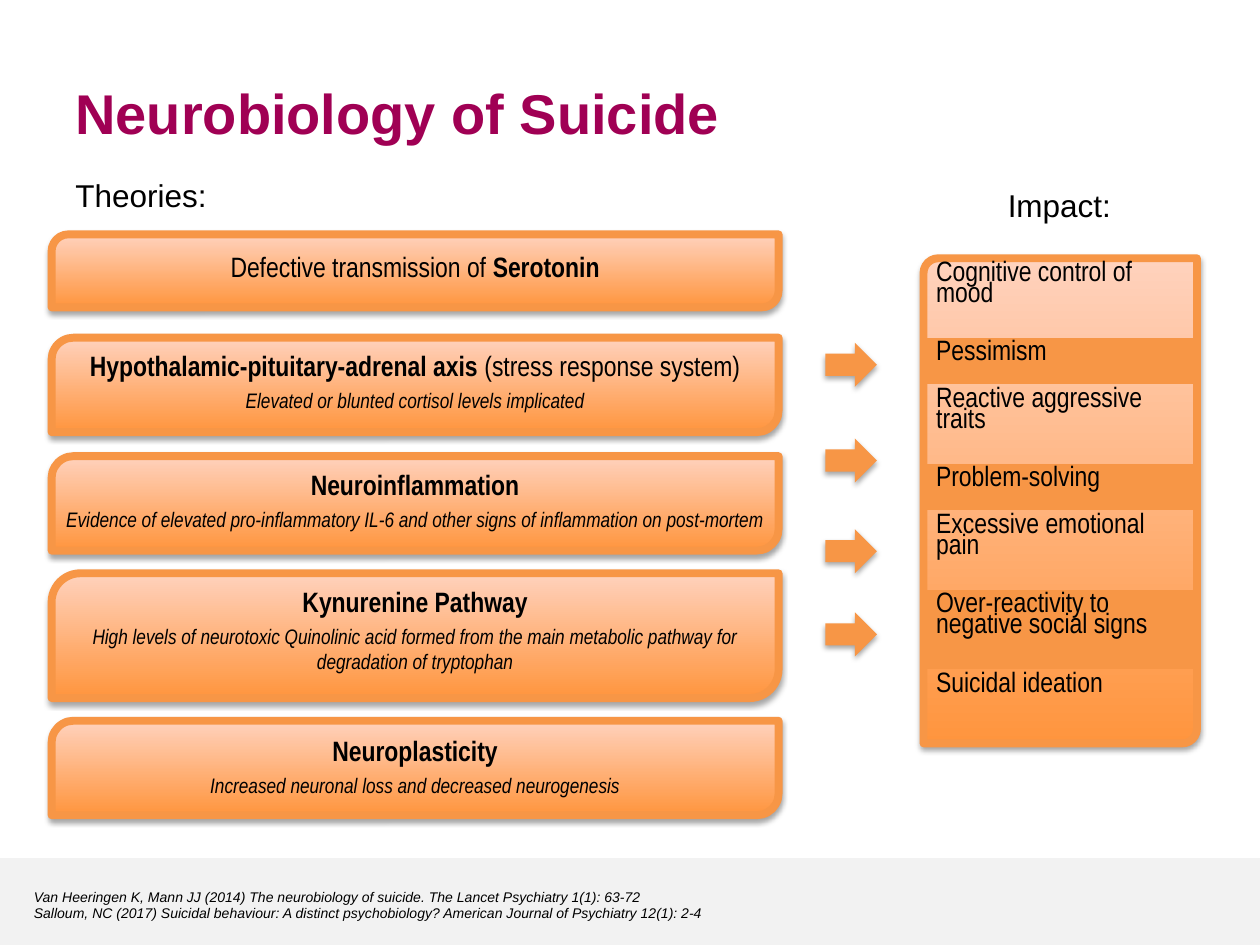
from dataclasses import dataclass

from lxml import etree
from pptx import Presentation
from pptx.dml.color import RGBColor as RGB
from pptx.enum.shapes import MSO_SHAPE as Shape
from pptx.enum.text import MSO_ANCHOR as Anchor, PP_ALIGN as Align
from pptx.oxml import parse_xml
from pptx.oxml.ns import qn
from pptx.util import Inches, Pt

NO_STYLE = "{2D5ABB26-0587-4C30-8999-92F81FD0307C}"
SHADOW = (
    '<a:effectLst xmlns:a="http://schemas.openxmlformats.org/drawingml/2006/main">'
    '<a:outerShdw blurRad="39400" dist="22900" dir="5400000" rotWithShape="0">'
    '<a:srgbClr val="000000"><a:alpha val="35000"/></a:srgbClr>'
    '</a:outerShdw></a:effectLst>'
)


@dataclass
class Theme:
    title: str = "A00054"
    text: str = "000000"
    accent: str = "F79646"
    deep: str = "FF953E"
    pale: str = "FFD2BD"
    footer: str = "F2F2F2"
    font: str = "Arial"
    narrow: str = "Arial Narrow"
    title_size: int = 32
    heading_size: int = 18
    body_size: int = 16
    detail_size: int = 12
    source_size: int = 8


def add_run(p, text, *, font, size, color, bold=False, italic=False):
    r = p.add_run()
    r.text = text
    f = r.font
    f.name, f.size, f.bold, f.italic = font, Pt(size), bold, italic
    f.color.rgb = RGB.from_string(color)


class SlideBuilder:
    def __init__(self, slide, theme):
        self.s, self.t = slide, theme

    def group(self):
        return self.s.shapes.add_group_shape().shapes

    def shape(self, kind, box, fill, shapes=None, shadow=True):
        sp = (shapes or self.s.shapes).add_shape(kind, *map(Inches, box))
        sp.fill.solid()
        sp.fill.fore_color.rgb = RGB.from_string(fill)
        sp.line.fill.background()
        if shadow:
            sp._element.spPr.append(parse_xml(SHADOW))
        else:
            sp.shadow.inherit = False
        return sp

    def panel(self, box, corner, shapes=None):
        sp = self.shape(Shape.ROUND_2_DIAG_RECTANGLE, box, self.t.accent, shapes)
        sp.adjustments[0], sp.adjustments[1] = corner, 0
        sp.fill.gradient()
        sp.fill.gradient_angle = 90
        for stop, color in zip(sp.fill.gradient_stops, (self.t.deep, self.t.pale)):
            stop.color.rgb = RGB.from_string(color)
        sp.line.color.rgb = RGB.from_string(self.t.accent)
        sp.line.width = Pt(4.5)

    def text(self, box, paragraphs, shapes=None, align=Align.LEFT, gap=0, top=0.05):
        """Each paragraph is a list of (text, format) runs."""
        tf = (shapes or self.s.shapes).add_textbox(*map(Inches, box)).text_frame
        tf.word_wrap = True
        tf.vertical_anchor = Anchor.TOP
        tf.margin_top = Inches(top)
        for i, runs in enumerate(paragraphs):
            p = tf.add_paragraph() if i else tf.paragraphs[0]
            p.alignment = align
            if i and gap:
                p.space_before = Pt(gap)
            for text, style in runs:
                add_run(p, text, **style)

    def card(self, top, height, offset, heading, detail):
        t, shapes = self.t, self.group()
        base = dict(font=t.narrow, color=t.text)
        lines = [[(text, dict(base, size=t.body_size, bold=bold)) for text, bold in heading]]
        if detail:
            lines.append([(detail, dict(base, size=t.detail_size, italic=True))])
        self.panel((0.41, top, 5.77, height), 0.231, shapes)
        self.text((0.41, top + offset, 5.77, height - 0.1), lines, shapes, Align.CENTER, gap=3)

    def striped_table(self, box, rows):
        t = self.t
        table = self.s.shapes.add_table(len(rows), 1, *map(Inches, box)).table
        table.first_row = table.horz_banding = False
        table._tbl.tblPr.find(qn("a:tableStyleId")).text = NO_STYLE
        for i, (text, height) in enumerate(rows):
            table.rows[i].height = Inches(height)
            cell = table.cell(i, 0)
            if i % 2:
                cell.fill.solid()
                cell.fill.fore_color.rgb = RGB.from_string(t.accent)
            else:
                cell.fill.background()
            p = cell.text_frame.paragraphs[0]
            p.line_spacing = 0.8
            add_run(p, text, font=t.narrow, size=t.body_size, color=t.text)


# Top, height, text offset, heading runs (text, bold), detail
THEORIES = [
    (1.86, 0.58, 0.07, [("Defective transmission of ", False), ("Serotonin", True)], None),
    (2.68, 0.75, 0.04, [("Hypothalamic-pituitary-adrenal axis ", True),
                        ("(stress response system)", False)],
     "Elevated or blunted cortisol levels implicated"),
    (3.62, 0.75, 0.04, [("Neuroinflammation", True)],
     "Evidence of elevated pro-inflammatory IL-6 and other signs of inflammation on post-mortem"),
    (4.55, 0.99, 0.04, [("Kynurenine Pathway", True)],
     "High levels of neurotoxic Quinolinic acid formed from the main metabolic pathway "
     "for degradation of tryptophan"),
    (5.72, 0.75, 0.05, [("Neuroplasticity", True)],
     "Increased neuronal loss and decreased neurogenesis"),
]
ONE_LINE, TWO_LINES = 0.37, 0.63
IMPACTS = [
    ("Cognitive control of mood", TWO_LINES),
    ("Pessimism", ONE_LINE),
    ("Reactive aggressive traits", TWO_LINES),
    ("Problem-solving", ONE_LINE),
    ("Excessive emotional pain", TWO_LINES),
    ("Over-reactivity to negative social signs", TWO_LINES),
    ("Suicidal ideation", ONE_LINE),
]
SOURCES = [
    "Van Heeringen K, Mann JJ (2014) The neurobiology of suicide. "
    "The Lancet Psychiatry 1(1): 63-72",
    "Salloum, NC (2017) Suicidal behaviour: A distinct psychobiology? "
    "American Journal of Psychiatry 12(1): 2-4",
]


def main():
    prs = Presentation()
    prs.slide_width, prs.slide_height = Inches(10), Inches(7.5)
    t = Theme()
    b = SlideBuilder(prs.slides.add_slide(prs.slide_layouts[6]), t)

    # Footer with sources
    b.shape(Shape.RECTANGLE, (0, 6.81, 10, 0.69), t.footer, shadow=False)
    source = dict(font=t.font, size=t.source_size, color=t.text, italic=True)
    b.text((0.17, 7, 8.36, 0.37), [[(line, source)] for line in SOURCES])

    # Title and column headings
    title = dict(font=t.font, size=t.title_size, color=t.title, bold=True)
    b.text((0.5, 0.52, 9, 0.83), [[("Neurobiology of Suicide", title)]], top=0.1)
    heading = dict(font=t.font, size=t.heading_size, color=t.text)
    for text, box in (("Theories:", (0.5, 1.33, 1.25, 0.71)),
                      ("Impact:", (7.9, 1.41, 1.27, 0.71))):
        b.text(box, [[(text, heading)]], top=0.07)

    # Theory cards
    for theory in THEORIES:
        b.card(*theory)

    # Impact panel
    b.panel((7.33, 2.05, 2.17, 3.85), 0.054)
    b.striped_table((7.33, 2.05, 2.17, 3.63), IMPACTS)

    # Arrows from theories to impact
    arrows = b.group()
    for top in (2.72, 3.48, 4.2, 4.86):
        b.shape(Shape.RIGHT_ARROW, (6.55, top, 0.41, 0.35), t.accent, arrows)

    prs.save("out.pptx")


if __name__ == "__main__":
    main()
